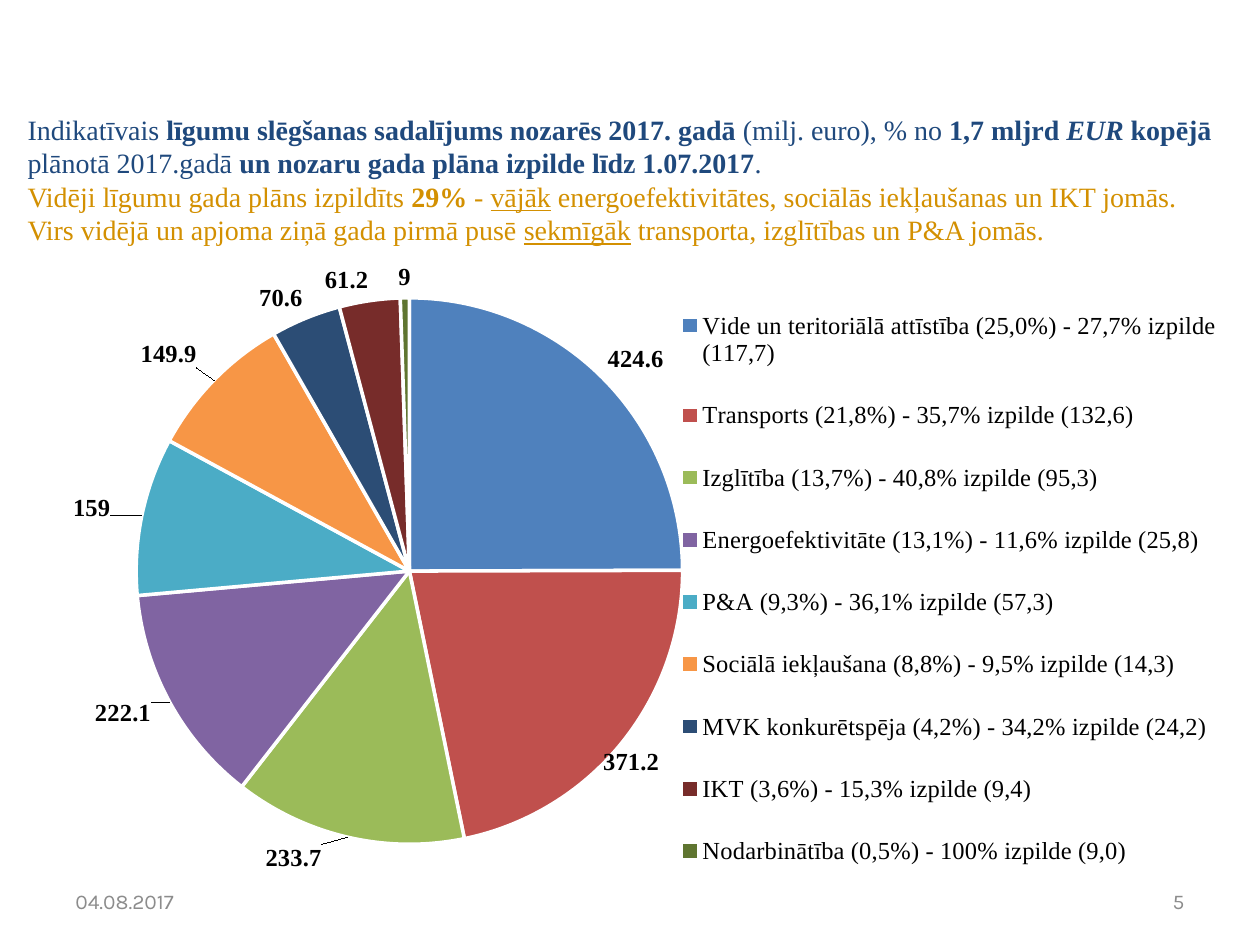
"""Build a slide with a pie chart of contract shares by sector."""
import dataclasses

import lxml.etree
import pptx
import pptx.chart.data
import pptx.dml.color
import pptx.enum.chart
import pptx.enum.text
import pptx.oxml.ns
import pptx.util

Inches = pptx.util.Inches


@dataclasses.dataclass(frozen=True)
class Theme:
    """Hold the colours, fonts and type sizes."""
    navy: str = "1F497D"
    gold: str = "D39001"
    grey: str = "8C8C8C"
    black: str = "000000"
    white: str = "FFFFFF"
    serif: str = "Times New Roman"
    sans: str = "Karla"
    lead: int = 16
    label: int = 14
    small: int = 12
    edge: int = 2


SECTORS = [
    ("Vide un teritoriālā attīstība (25,0%) - 27,7% izpilde (117,7)", 424.6, "4F81BD"),
    ("Transports (21,8%) - 35,7% izpilde (132,6)", 371.2, "C0504D"),
    ("Izglītība (13,7%) - 40,8% izpilde (95,3)", 233.7, "9BBB59"),
    ("Energoefektivitāte (13,1%) - 11,6% izpilde (25,8)", 222.1, "8064A2"),
    ("P&A (9,3%) - 36,1% izpilde (57,3)", 159, "4BACC6"),
    ("Sociālā iekļaušana (8,8%) - 9,5% izpilde (14,3)", 149.9, "F79646"),
    ("MVK konkurētspēja (4,2%) - 34,2% izpilde (24,2)", 70.6, "2C4D75"),
    ("IKT (3,6%) - 15,3% izpilde (9,4)", 61.2, "772C2A"),
    ("Nodarbinātība (0,5%) - 100% izpilde (9,0)", 9, "5F7530"),
]
SHIFTS = {1: (-0.02, 0), 2: (-0.02, 0), 3: (-0.01, -0.01), 4: (-0.02, 0.01), 5: (-0.01, -0.01)}

LEAD = [
    ("navy", [
        ("Indikatīvais ", ""),
        ("līgumu slēgšanas sadalījums nozarēs 2017. gadā ", "b"),
        ("(milj. euro), % no ", ""),
        ("1,7 mljrd ", "b"),
        ("EUR", "bi"),
        (" kopējā ", "b"),
        ("plānotā 2017.gadā ", ""),
        ("un nozaru gada plāna izpilde līdz 1.07.2017", "b"),
        (".", ""),
    ]),
    ("gold", [
        ("Vidēji līgumu gada plāns izpildīts ", ""),
        ("29%", "b"),
        (" - ", ""),
        ("vājāk", "u"),
        (" energoefektivitātes, sociālās iekļaušanas un IKT jomās.", ""),
    ]),
    ("gold", [
        ("Virs vidējā un apjoma ziņā gada pirmā pusē ", ""),
        ("sekmīgāk", "u"),
        (" transporta, izglītības un P&A jomās.", ""),
    ]),
]


def tint(code):
    """Turn a hex code into a colour."""
    return pptx.dml.color.RGBColor.from_string(code)


def style(font, face, size, color, marks=""):
    """Set the look of a font."""
    font.name = face
    font.size = pptx.util.Pt(size)
    font.color.rgb = tint(color)
    font.bold = "b" in marks
    font.italic = "i" in marks
    font.underline = "u" in marks


def write(para, text, **form):
    """Add a run of text with its format."""
    run = para.add_run()
    run.text = text
    style(run.font, **form)


def place(node, after=None, inner=False, **spots):
    """Give a chart part a manual layout."""
    tag = pptx.oxml.ns.qn
    for old in node.findall(tag("c:layout")):
        node.remove(old)
    layout = lxml.etree.Element(tag("c:layout"))
    manual = lxml.etree.SubElement(layout, tag("c:manualLayout"))
    if inner:
        spots = {"layoutTarget": "inner", **spots}
    for name, value in spots.items():
        lxml.etree.SubElement(manual, tag("c:" + name)).set("val", str(value))
    if after is None:
        node.insert(0, layout)
    else:
        node.find(tag(after)).addnext(layout)


class Page:
    """Hold the theme and the current slide."""

    def __init__(self, deck, theme):
        """Start a blank slide."""
        self.theme = theme
        self.slide = deck.slides.add_slide(deck.slide_layouts[6])

    def box(self, left, top, width, height):
        """Add a wrapping text box."""
        shape = self.slide.shapes.add_textbox(*map(Inches, (left, top, width, height)))
        shape.text_frame.word_wrap = True
        return shape.text_frame

    def foot(self, text, left, align):
        """Add a footer item."""
        theme = self.theme
        frame = self.box(left, 6.95, 2.33, 0.4)
        frame.vertical_anchor = pptx.enum.text.MSO_ANCHOR.MIDDLE
        para = frame.paragraphs[0]
        para.alignment = align
        write(para, text, face=theme.sans, size=theme.small, color=theme.grey)

    def lead(self, lines):
        """Add the heading text."""
        theme = self.theme
        frame = self.box(0.12, 0.84, 9.61, 1.18)
        frame.auto_size = pptx.enum.text.MSO_AUTO_SIZE.SHAPE_TO_FIT_TEXT
        for num, (hue, runs) in enumerate(lines):
            para = frame.add_paragraph() if num else frame.paragraphs[0]
            for text, marks in runs:
                write(para, text, face=theme.serif, size=theme.lead,
                      color=getattr(theme, hue), marks=marks)

    def pie(self, rows, shifts):
        """Add the pie chart with its legend and labels."""
        theme = self.theme
        kind = pptx.enum.chart
        names, values, hues = zip(*rows)
        data = pptx.chart.data.CategoryChartData()
        data.categories = names
        data.add_series("Series 1", values)
        spot = map(Inches, (0.2, 1.87, 9.53, 5.49))
        chart = self.slide.shapes.add_chart(kind.XL_CHART_TYPE.PIE, *spot, data).chart
        chart.has_title = False
        style(chart.font, theme.serif, theme.label, theme.black)
        chart.has_legend = True
        legend = chart.legend
        legend.position = kind.XL_LEGEND_POSITION.RIGHT
        legend.include_in_layout = False
        style(legend.font, theme.serif, theme.label, theme.black)

        plot = chart.plots[0]
        plot.vary_by_categories = True
        series = plot.series[0]
        for num, hue in enumerate(hues):
            form = series.points[num].format
            form.fill.solid()
            form.fill.fore_color.rgb = tint(hue)
            form.line.color.rgb = tint(theme.white)
            form.line.width = pptx.util.Pt(theme.edge)

        labels = series.data_labels
        labels.show_value = True
        labels.number_format = "General"
        labels.number_format_is_linked = False
        for part in [labels] + [series.points[num].data_label for num in shifts]:
            part.position = kind.XL_LABEL_POSITION.OUTSIDE_END
            style(part.font, theme.serif, theme.label, theme.black, "b")

        root = chart.element
        for node, (x, y) in zip(root.xpath(".//c:dLbl"), shifts.values()):
            place(node, "c:idx", x=x, y=y)
        place(root.xpath(".//c:plotArea")[0], inner=True, xMode="edge", yMode="edge",
              x=0.09, y=0.09, w=0.46, h=0.79)
        place(root.xpath(".//c:legend")[0], "c:legendPos", xMode="edge", yMode="edge",
              x=0.54, y=0.06, w=0.46, h=0.9)


def main():
    """Build and save the deck."""
    deck = pptx.Presentation()
    deck.slide_width, deck.slide_height = Inches(10), Inches(7.5)
    page = Page(deck, Theme())
    align = pptx.enum.text.PP_ALIGN
    page.foot("04.08.2017", 0.5, align.LEFT)
    page.foot("5", 7.17, align.RIGHT)
    page.pie(SECTORS, SHIFTS)
    page.lead(LEAD)
    deck.save("out.pptx")


if __name__ == "__main__":
    main()
